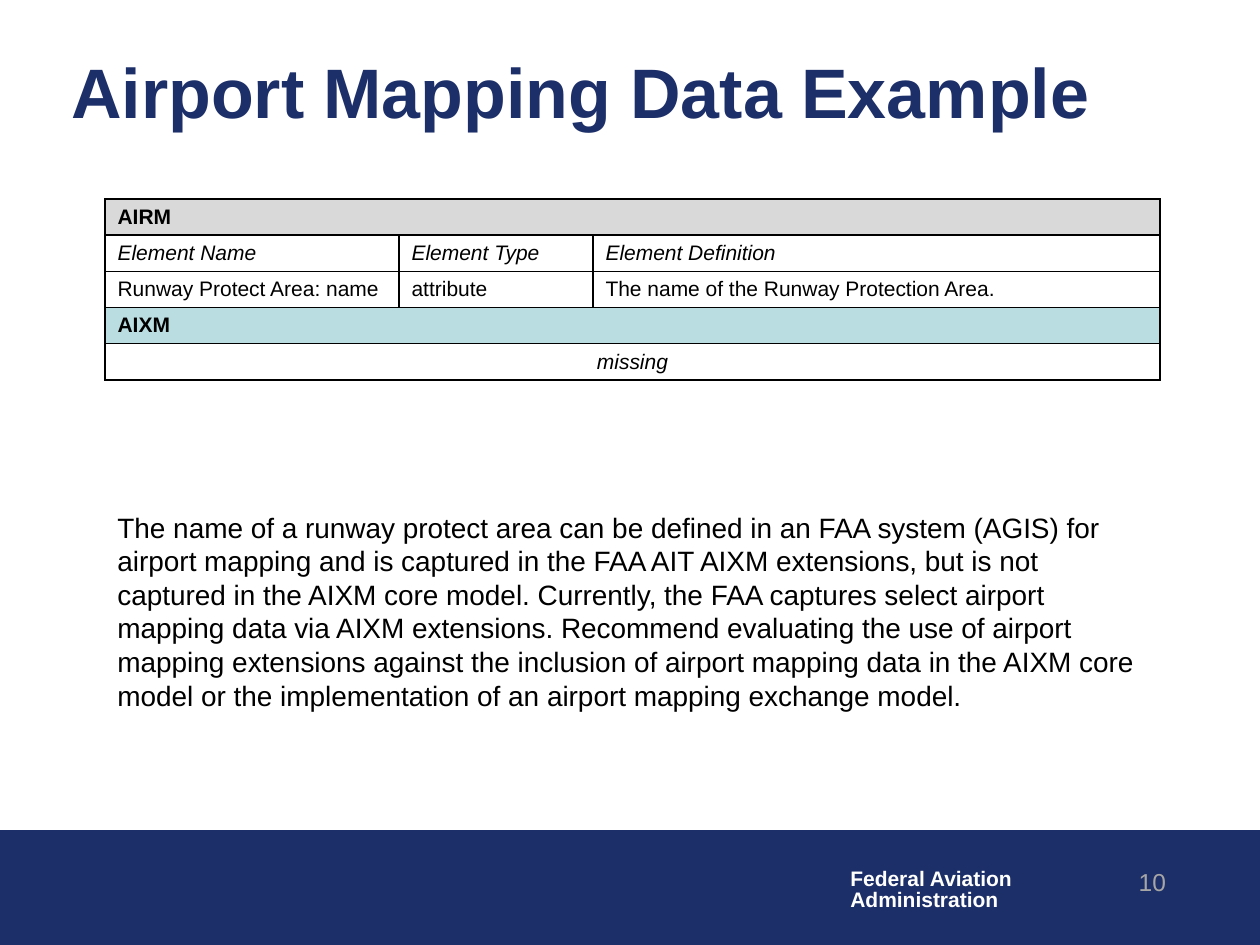
import dataclasses
import typing

import lxml.etree
import pptx
import pptx.dml.color
import pptx.enum.shapes
import pptx.enum.text
import pptx.oxml.ns
import pptx.util

EMU_PER_PX = 914400 / 126
FONT = "Arial"
COLORS = {
    "navy": "1D2F68",
    "white": "FFFFFF",
    "black": "000000",
    "gray": "D9D9D9",
    "teal": "BADDE1",
    "number": "A6A6A6",
}
ALIGN = pptx.enum.text.PP_ALIGN
ANCHOR = pptx.enum.text.MSO_ANCHOR


@dataclasses.dataclass
class TextBox:
    lines: list[str]
    left: int
    top: int
    width: int
    height: int
    size: int
    color: str = "black"
    bold: bool = False
    align: ALIGN = ALIGN.LEFT
    anchor: ANCHOR = ANCHOR.TOP
    line_spacing: float = 1.0


@dataclasses.dataclass
class Row:
    """A table row; a single text spans all columns."""
    texts: list[str]
    bold: bool = False
    italic: bool = False
    fill: typing.Optional[str] = None
    align: ALIGN = ALIGN.LEFT


TABLE_LEFT, TABLE_TOP, ROW_HEIGHT = 105, 199, 36
COLUMN_WIDTHS = [294, 194, 567]
ROWS = [
    Row(["AIRM"], bold=True, fill="gray"),
    Row(["Element Name", "Element Type", "Element Definition"], italic=True),
    Row(["Runway Protect Area: name", "attribute",
         "The name of the Runway Protection Area."]),
    Row(["AIXM"], bold=True, fill="teal"),
    Row(["missing"], italic=True, align=ALIGN.CENTER),
]
BODY = (
    "The name of a runway protect area can be defined in an FAA system (AGIS) for "
    "airport mapping and is captured in the FAA AIT AIXM extensions, but is not "
    "captured in the AIXM core model. Currently, the FAA captures select airport "
    "mapping data via AIXM extensions. Recommend evaluating the use of airport "
    "mapping extensions against the inclusion of airport mapping data in the AIXM "
    "core model or the implementation of an airport mapping exchange model."
)
TEXT_BOXES = [
    TextBox(["Federal Aviation", "Administration"], 838, 863, 189, 55, 12, "white",
            bold=True, line_spacing=0.85),
    TextBox(["Airport Mapping Data Example"], 59, 48, 1168, 84, 40, "navy",
            bold=True, anchor=ANCHOR.MIDDLE),
    TextBox([BODY], 105, 504, 1050, 262, 16),
    TextBox(["10"], 1027, 861, 151, 63, 14, "number", align=ALIGN.RIGHT),
]


def px(length: int) -> pptx.util.Emu:
    return pptx.util.Emu(round(length * EMU_PER_PX))


def rgb(name: str) -> pptx.dml.color.RGBColor:
    return pptx.dml.color.RGBColor.from_string(COLORS[name])


def style(paragraph, size: int, color: str, bold: bool, align: ALIGN,
          italic: bool = False) -> None:
    paragraph.alignment = align
    font = paragraph.font
    font.name, font.size = FONT, pptx.util.Pt(size)
    font.bold, font.italic = bold, italic
    font.color.rgb = rgb(color)


def draw_footer_band(slide) -> None:
    band = slide.shapes.add_shape(pptx.enum.shapes.MSO_SHAPE.RECTANGLE,
                                  px(0), px(831), px(1260), px(113))
    band.shadow.inherit = False
    band.fill.solid()
    band.fill.fore_color.rgb = rgb("navy")
    band.line.color.rgb = rgb("navy")
    band.line.width = pptx.util.Pt(0.75)


def draw_text(slide, box: TextBox) -> None:
    shape = slide.shapes.add_textbox(px(box.left), px(box.top),
                                     px(box.width), px(box.height))
    frame = shape.text_frame
    frame.word_wrap = True
    frame.margin_right = px(12)
    frame.vertical_anchor = box.anchor
    frame.text = "\n".join(box.lines)
    for paragraph in frame.paragraphs:
        paragraph.line_spacing = box.line_spacing
        style(paragraph, box.size, box.color, box.bold, box.align)


def add_borders(cell) -> None:
    properties = cell._tc.get_or_add_tcPr()
    for side in ("a:lnL", "a:lnR", "a:lnT", "a:lnB"):
        line = lxml.etree.SubElement(properties, pptx.oxml.ns.qn(side),
                                     w=str(pptx.util.Pt(1)))
        fill = lxml.etree.SubElement(line, pptx.oxml.ns.qn("a:solidFill"))
        lxml.etree.SubElement(fill, pptx.oxml.ns.qn("a:srgbClr"), val=COLORS["black"])


def draw_table(slide) -> None:
    table = slide.shapes.add_table(
        len(ROWS), len(COLUMN_WIDTHS), px(TABLE_LEFT), px(TABLE_TOP),
        px(sum(COLUMN_WIDTHS)), px(ROW_HEIGHT * len(ROWS))).table
    table.first_row = table.horz_banding = False
    for column, width in zip(table.columns, COLUMN_WIDTHS):
        column.width = px(width)
    for index, row in enumerate(ROWS):
        table.rows[index].height = px(ROW_HEIGHT)
        cells = list(table.rows[index].cells)
        if len(row.texts) == 1:
            cells[0].merge(cells[-1])
        for cell in cells:
            cell.vertical_anchor = ANCHOR.MIDDLE
            add_borders(cell)
            if row.fill:
                cell.fill.solid()
                cell.fill.fore_color.rgb = rgb(row.fill)
            else:
                cell.fill.background()
            style(cell.text_frame.paragraphs[0], 12, "black", row.bold,
                  row.align, row.italic)
        for cell, text in zip(cells, row.texts):
            cell.text_frame.paragraphs[0].add_run().text = text


def main() -> None:
    presentation = pptx.Presentation()
    presentation.slide_width, presentation.slide_height = px(1260), px(945)
    slide = presentation.slides.add_slide(presentation.slide_layouts[6])
    draw_footer_band(slide)
    draw_table(slide)
    for box in TEXT_BOXES:
        draw_text(slide, box)
    presentation.save("out.pptx")


if __name__ == "__main__":
    main()
